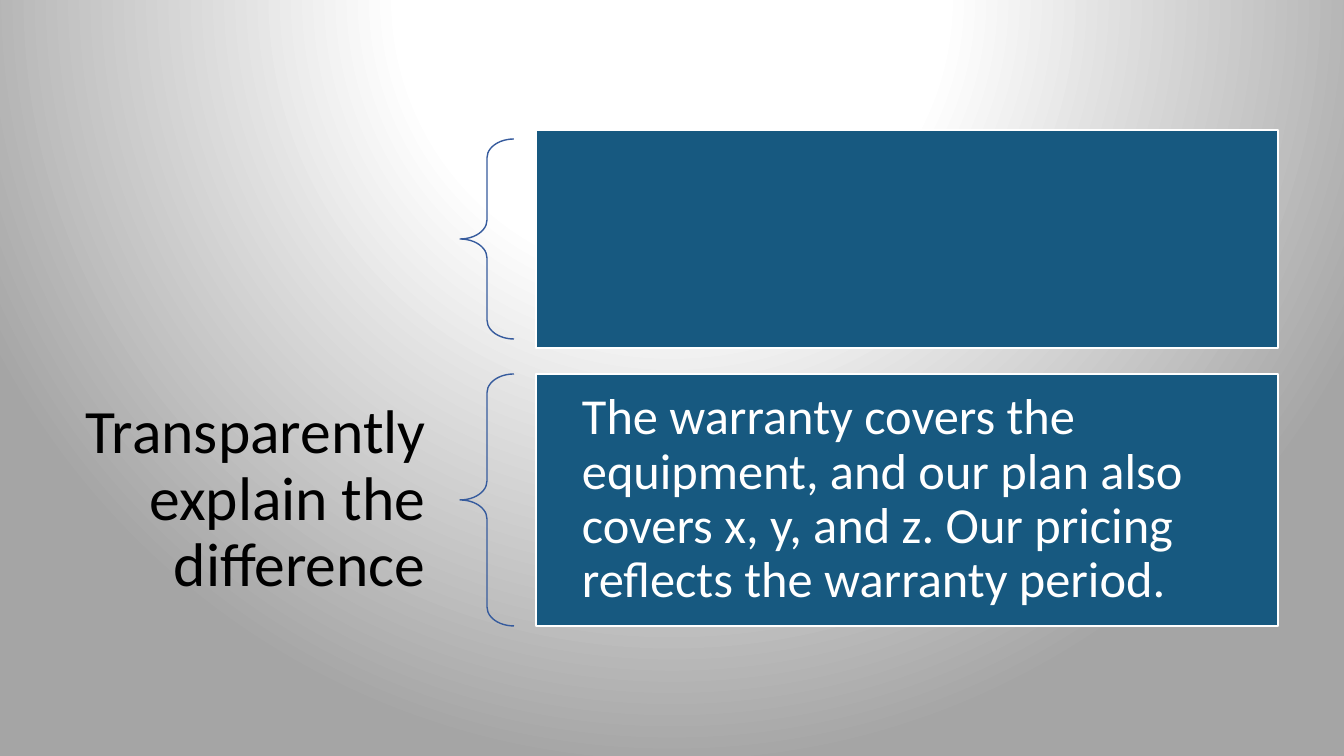
"""Build a slide of two braced panels, the lower one labelled."""
from lxml import etree
from pptx import Presentation, util as u
from pptx.dml.color import RGBColor
from pptx.enum import shapes, text
from pptx.oxml import ns

PX = 914400 / 100.8
SIZE = 1344, 756
BRACE = 460, 54
PANEL = 536, 742
ROWS = [
    {"brace": (139, 200), "panel": (130, 218)},
    {"brace": (374, 252), "panel": (374, 252)},
]
LABEL = {
    "words": "Transparently explain the difference",
    "box": (46, 385, 414, 231), "pad": (34, 12), "indent": 0,
    "align": text.PP_ALIGN.RIGHT,
    "font": {"size": u.Pt(44), "name": "Calibri"}, "color": "000000",
}
BODY = {
    "words": "The warranty covers the equipment, and our plan also covers "
             "x, y, and z. Our pricing reflects the warranty period.",
    "box": (536, 374, 742, 252), "pad": (15, 15), "indent": 31,
    "align": text.PP_ALIGN.LEFT,
    "font": {"size": u.Pt(36), "name": "Calibri"}, "color": "FFFFFF",
}
STOPS = [(0, "FFFFFF"), (35, "FFFFFF"), (100, "A5A5A5")]
FOCUS = {"l": 50, "t": -80, "r": 50, "b": 180}


def px(*vals):
    return [u.Emu(round(v * PX)) for v in vals]


def paint(part, color):
    part.rgb = RGBColor.from_string(color)


def assign(item, vals):
    for key, val in vals.items():
        setattr(item, key, val)


def add(root, tag, **attrs):
    return etree.SubElement(root, ns.qn(tag), attrs)


def shade(slide):
    fill = slide.background.fill
    fill.gradient()
    grad = slide.element.find(".//" + ns.qn("a:gradFill"))
    for child in list(grad):
        grad.remove(child)
    stops = add(grad, "a:gsLst")
    for pos, color in STOPS:
        stop = add(stops, "a:gs", pos=str(pos * 1000))
        add(stop, "a:srgbClr", val=color)
    path = add(grad, "a:path", path="circle")
    add(path, "a:fillToRect", **{k: str(v * 1000) for k, v in FOCUS.items()})


def draw(slide, kind, box, line, fill=None):
    shape = slide.shapes.add_shape(kind, *px(*box))
    shape.shadow.inherit = False
    shape.line.width = u.Pt(1)
    paint(shape.line.color, line)
    if fill:
        shape.fill.solid()
        paint(shape.fill.fore_color, fill)
    else:
        shape.fill.background()
    return shape


def write(slide, item):
    frame = slide.shapes.add_textbox(*px(*item["box"])).text_frame
    side, top = px(*item["pad"])
    assign(frame, {
        "word_wrap": True, "vertical_anchor": text.MSO_ANCHOR.MIDDLE,
        "margin_left": side, "margin_right": side,
        "margin_top": top, "margin_bottom": top,
    })
    para = frame.paragraphs[0]
    assign(para, {"alignment": item["align"], "line_spacing": 0.9})
    if item["indent"]:
        para._p.get_or_add_pPr().set("marL", str(px(item["indent"])[0]))
    run = para.add_run()
    run.text = item["words"]
    assign(run.font, item["font"])
    paint(run.font.color, item["color"])


def main():
    deck = Presentation()
    deck.slide_width, deck.slide_height = px(*SIZE)
    slide = deck.slides.add_slide(deck.slide_layouts[6])
    shade(slide)
    kind = shapes.MSO_SHAPE
    for row in ROWS:
        (left, wide), (top, high) = BRACE, row["brace"]
        brace = draw(slide, kind.LEFT_BRACE, (left, top, wide, high), "365B9D")
        brace.adjustments[0] = 0.35
        (left, wide), (top, high) = PANEL, row["panel"]
        draw(slide, kind.RECTANGLE, (left, top, wide, high), "FFFFFF", "175980")
    for item in (LABEL, BODY):
        write(slide, item)
    deck.save("out.pptx")


if __name__ == "__main__":
    main()
